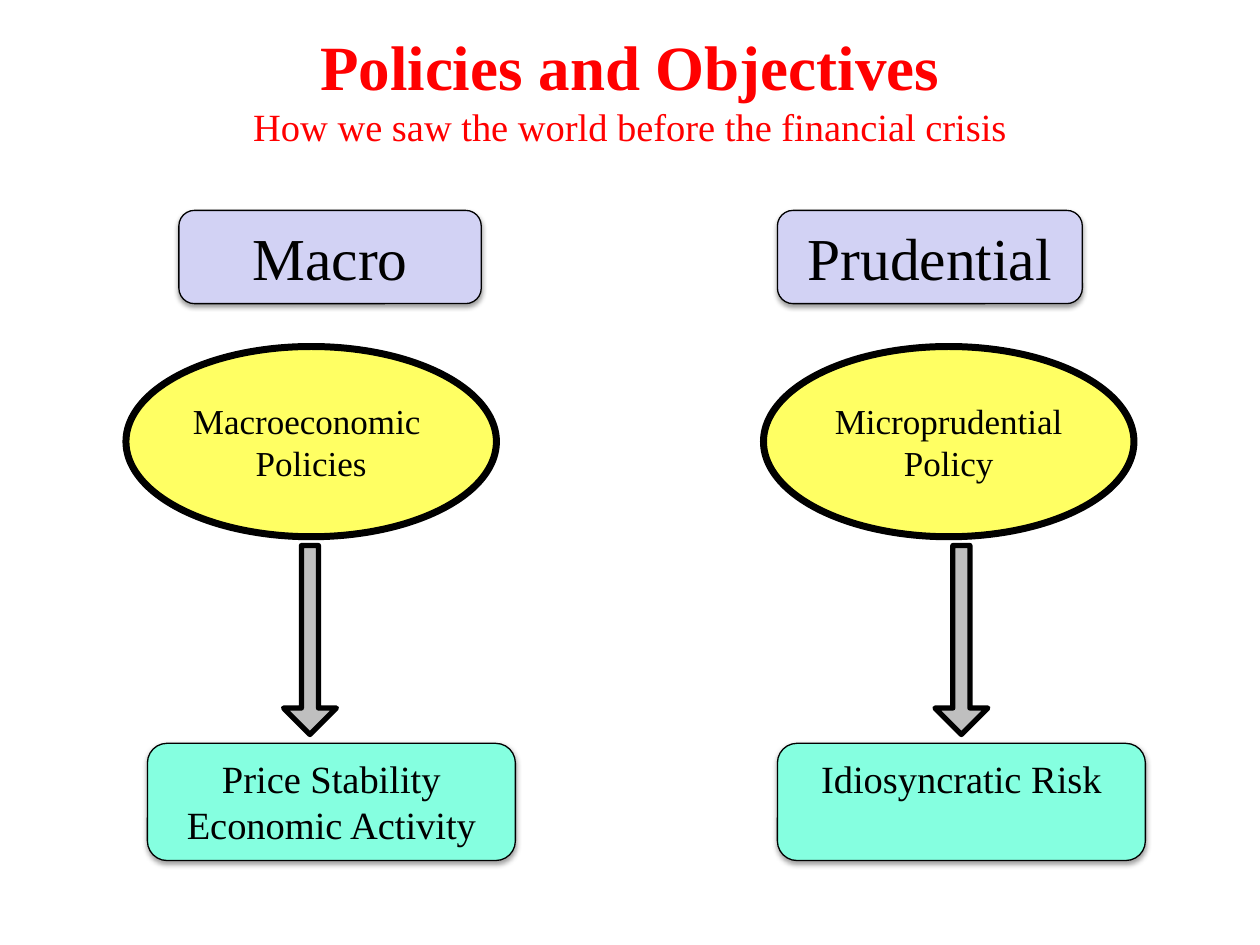
from lxml import etree
from pptx import Presentation
from pptx import util as u
from pptx.dml.color import RGBColor
from pptx.enum import shapes, text
from pptx.oxml import ns

# Content
HEADING = ["Policies and Objectives",
           "How we saw the world before the financial crisis"]
# Each part: lines, left edge, width
COLUMNS = [
    {"area": (["Macro"], 1.42, 2.4),
     "policy": (["Macroeconomic ", "Policies"], 1, 2.94),
     "goal": (["Price Stability", "Economic Activity"], 1.17, 2.92),
     "arrow": ([], 2.25, 0.42)},
    {"area": (["Prudential"], 6.17, 2.42),
     "policy": (["Microprudential", "Policy"], 6.06, 2.94),
     "goal": (["Idiosyncratic Risk"], 6.17, 2.92),
     "arrow": ([], 7.42, 0.42)},
]

THEME = {"font": "Times New Roman", "ink": "000000", "heading": "FF0000",
         "title_size": 36, "subtitle_size": 22}
# Look and row of every kind of part
ROUND, OVAL, DOWN = (shapes.MSO_SHAPE.ROUNDED_RECTANGLE,
                     shapes.MSO_SHAPE.OVAL, shapes.MSO_SHAPE.DOWN_ARROW)
ROWS = {
    "area": dict(preset=ROUND, top=1.67, height=0.74, fill="D2D2F4",
                 line=0.75, size=34, shadow=True),
    "policy": dict(preset=OVAL, top=2.75, height=1.51, fill="FFFF00",
                   line=4, size=20, alpha=61, inset=0.2),
    "goal": dict(preset=ROUND, top=5.9, height=0.93, fill="85FFE0",
                 line=0.75, size=22, shadow=True),
    "arrow": dict(preset=DOWN, top=4.33, height=1.5, fill="BFBFBF",
                  line=3, size=20, adjust=(0.322, 0.5)),
}


def color(code):
    return RGBColor.from_string(code)


def child(parent, tag, **attributes):
    values = {key: str(value) for key, value in attributes.items()}
    return etree.SubElement(parent, ns.qn(tag), values)


def write(frame, lines, ink):
    """Fill a frame with centred lines of (wording, size, bold)."""
    frame.word_wrap = True
    frame.auto_size = text.MSO_AUTO_SIZE.NONE
    frame.vertical_anchor = text.MSO_ANCHOR.TOP
    for i, (wording, size, bold) in enumerate(lines):
        line = frame.paragraphs[0] if i == 0 else frame.add_paragraph()
        line.alignment = text.PP_ALIGN.CENTER
        run = line.add_run()
        run.text = wording
        run.font.name = THEME["font"]
        run.font.size = u.Pt(size)
        run.font.bold = bold
        run.font.color.rgb = color(ink)


def add_soft_shadow(part):
    effects = part._element.spPr.find(ns.qn("a:effectLst"))
    shadow = child(effects, "a:outerShdw", blurRad=u.Pt(3.1), dist=u.Pt(1.6),
                   dir=90 * 60000, rotWithShape=0)
    tint = child(shadow, "a:srgbClr", val=THEME["ink"])
    child(tint, "a:alpha", val=38000)


def add_part(slide, row, lines, left, width):
    part = slide.shapes.add_shape(
        row["preset"], u.Inches(left), u.Inches(row["top"]),
        u.Inches(width), u.Inches(row["height"]))
    for i, value in enumerate(row.get("adjust", ())):
        part.adjustments[i] = value
    part.fill.solid()
    part.fill.fore_color.rgb = color(row["fill"])
    part.line.color.rgb = color(THEME["ink"])
    part.line.width = u.Pt(row["line"])
    part.shadow.inherit = False
    if "alpha" in row:
        tint = part._element.spPr.find(ns.qn("a:solidFill"))[0]
        child(tint, "a:alpha", val=row["alpha"] * 1000)
    if row.get("shadow"):
        add_soft_shadow(part)
    if lines:
        frame = part.text_frame
        frame.margin_top = frame.margin_bottom = u.Inches(row.get("inset", 0.05))
        write(frame, [(line, row["size"], False) for line in lines], THEME["ink"])


def main():
    deck = Presentation()
    deck.slide_width, deck.slide_height = u.Inches(10), u.Inches(7.5)
    slide = deck.slides.add_slide(deck.slide_layouts[6])

    # Both columns, row by row
    for name, row in ROWS.items():
        for column in COLUMNS:
            add_part(slide, row, *column[name])

    # Heading across the full width
    heading = slide.shapes.add_textbox(0, u.Inches(0.17),
                                       deck.slide_width, u.Inches(1.08))
    title, subtitle = HEADING
    write(heading.text_frame, [(title, THEME["title_size"], True),
                               (subtitle, THEME["subtitle_size"], False)],
          THEME["heading"])
    deck.save("out.pptx")


if __name__ == "__main__":
    main()
